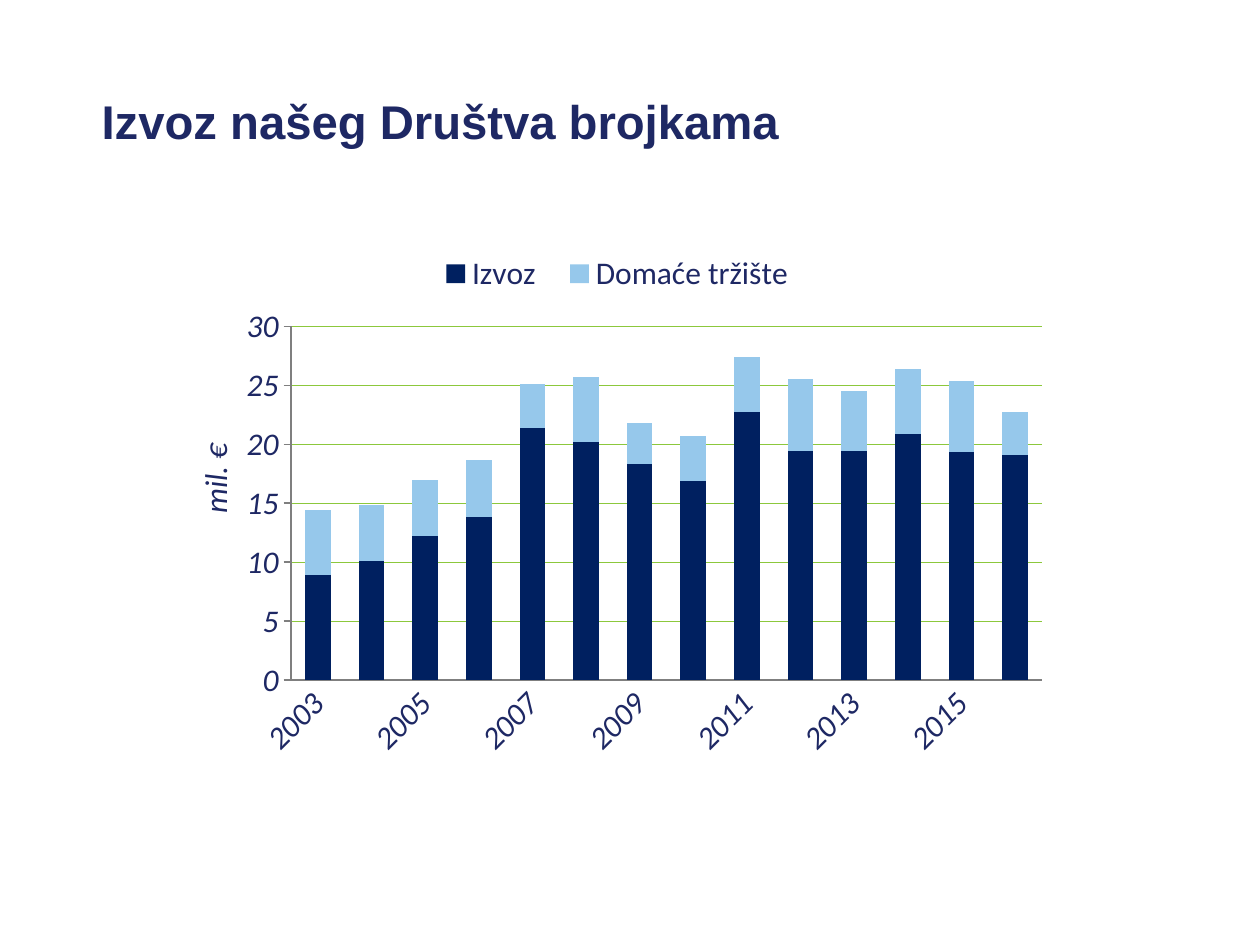
import pptx
import pptx.chart.data
import pptx.dml.color
import pptx.enum.chart
import pptx.enum.text
import pptx.oxml
import pptx.oxml.ns
import pptx.util

Pt = pptx.util.Pt
RGBColor = pptx.dml.color.RGBColor
qn = pptx.oxml.ns.qn

INDIGO = RGBColor(0x1E, 0x28, 0x64)
NAVY = RGBColor(0x00, 0x20, 0x60)
SKY = RGBColor(0x96, 0xC8, 0xEB)
GREEN = RGBColor(0x8C, 0xC8, 0x3C)
GRAY = RGBColor(0x7F, 0x7F, 0x7F)

TITLE = "Izvoz našeg Društva brojkama"
UNIT = "mil. €"
YEARS = [str(year) for year in range(2003, 2017)]
SERIES = [
    ("Izvoz", NAVY, [8.9, 10.1, 12.2, 13.8, 21.4, 20.2, 18.3, 16.9, 22.7, 19.4, 19.4, 20.9, 19.3, 19.1]),
    ("Domaće tržište", SKY, [5.5, 4.7, 4.8, 4.9, 3.7, 5.5, 3.5, 3.8, 4.7, 6.1, 5.1, 5.5, 6.1, 3.6]),
]
PLOT_LAYOUT = {"x": 0.242, "y": 0.152, "w": 0.617, "h": 0.585}
LEGEND_LAYOUT = {"x": 0.35, "y": 0.03, "w": 0.32, "h": 0.07}
UNIT_LAYOUT = {"x": 0.157, "y": 0.336}
CHART_NAMESPACE = pptx.oxml.ns.nsdecls("c")


def place(parent, layout, before=None, inner=False):
    for old in parent.findall(qn("c:layout")):
        parent.remove(old)
    modes = [("layoutTarget", "inner")] if inner else []
    modes += [(f"{key}Mode", "edge") for key in layout if key in "xy"]
    parts = "".join(f'<c:{tag} val="{value}"/>' for tag, value in modes + list(layout.items()))
    element = pptx.oxml.parse_xml(
        f"<c:layout {CHART_NAMESPACE}>"
        f"<c:manualLayout>{parts}</c:manualLayout></c:layout>")
    if before:
        parent.find(qn(before)).addprevious(element)
    else:
        parent.insert(0, element)


def set_font(font, name, size, bold=False, italic=False):
    font.name = name
    font.size = Pt(size)
    font.bold = bold
    font.italic = italic
    font.color.rgb = INDIGO


def set_line(line, color, width):
    line.color.rgb = color
    line.width = Pt(width)


def add_title(page):
    box = page.shapes.add_textbox(Pt(51), Pt(49), Pt(632), Pt(40))
    frame = box.text_frame
    frame.word_wrap = True
    frame.vertical_anchor = pptx.enum.text.MSO_ANCHOR.MIDDLE
    frame.text = TITLE
    set_font(frame.paragraphs[0].font, "Arial", 27, bold=True)


def style_axes(chart):
    years, values = chart.category_axis, chart.value_axis
    marks = pptx.enum.chart.XL_TICK_MARK
    for axis, mark in ((years, marks.NONE), (values, marks.OUTSIDE)):
        axis.major_tick_mark = mark
        axis.minor_tick_mark = marks.NONE
        set_line(axis.format.line, GRAY, 0.75)
        set_font(axis.tick_labels.font, "Calibri", 18, italic=True)

    years_xml = years._element
    years_xml.find(qn("c:txPr")).find(qn("a:bodyPr")).set("rot", "-2700000")
    years_xml.find(qn("c:noMultiLvlLbl")).addprevious(
        pptx.oxml.parse_xml(f'<c:tickLblSkip {CHART_NAMESPACE} val="2"/>'))

    values.minimum_scale = 0
    values.maximum_scale = 30
    values.major_unit = 5
    values.tick_labels.number_format = "#,##0"
    values.tick_labels.number_format_is_linked = False
    values.has_major_gridlines = True
    set_line(values.major_gridlines.format.line, GREEN, 0.15)

    frame = values.axis_title.text_frame
    frame.text = UNIT
    set_font(frame.paragraphs[0].font, "Calibri", 18, italic=True)
    body = frame._txBody.find(qn("a:bodyPr"))
    body.set("rot", "-5400000")
    body.set("vert", "horz")
    place(values.axis_title._element, UNIT_LAYOUT, before="c:overlay")


def add_chart(page):
    data = pptx.chart.data.CategoryChartData(number_format="0.0")
    data.categories = YEARS
    for name, _, amounts in SERIES:
        data.add_series(name, amounts)
    chart = page.shapes.add_chart(
        pptx.enum.chart.XL_CHART_TYPE.COLUMN_STACKED,
        Pt(-2), Pt(134), Pt(695.5), Pt(345.5), data).chart
    chart.has_title = False
    set_font(chart.font, "Calibri", 18)

    plot = chart.plots[0]
    plot.gap_width = 109
    plot.overlap = 100
    plot.vary_by_categories = False
    for series, (_, color, _) in zip(plot.series, SERIES):
        series.format.fill.solid()
        series.format.fill.fore_color.rgb = color

    style_axes(chart)
    chart.has_legend = True
    chart.legend.position = pptx.enum.chart.XL_LEGEND_POSITION.BOTTOM
    chart.legend.include_in_layout = False
    set_font(chart.legend.font, "Calibri", 18)
    place(chart.legend._element, LEGEND_LAYOUT, before="c:overlay")
    place(chart._chartSpace.chart.plotArea, PLOT_LAYOUT, inner=True)


def main():
    deck = pptx.Presentation()
    deck.slide_width, deck.slide_height = Pt(720), Pt(540)
    page = deck.slides.add_slide(deck.slide_layouts[6])
    add_title(page)
    add_chart(page)
    deck.save("out.pptx")


if __name__ == "__main__":
    main()
